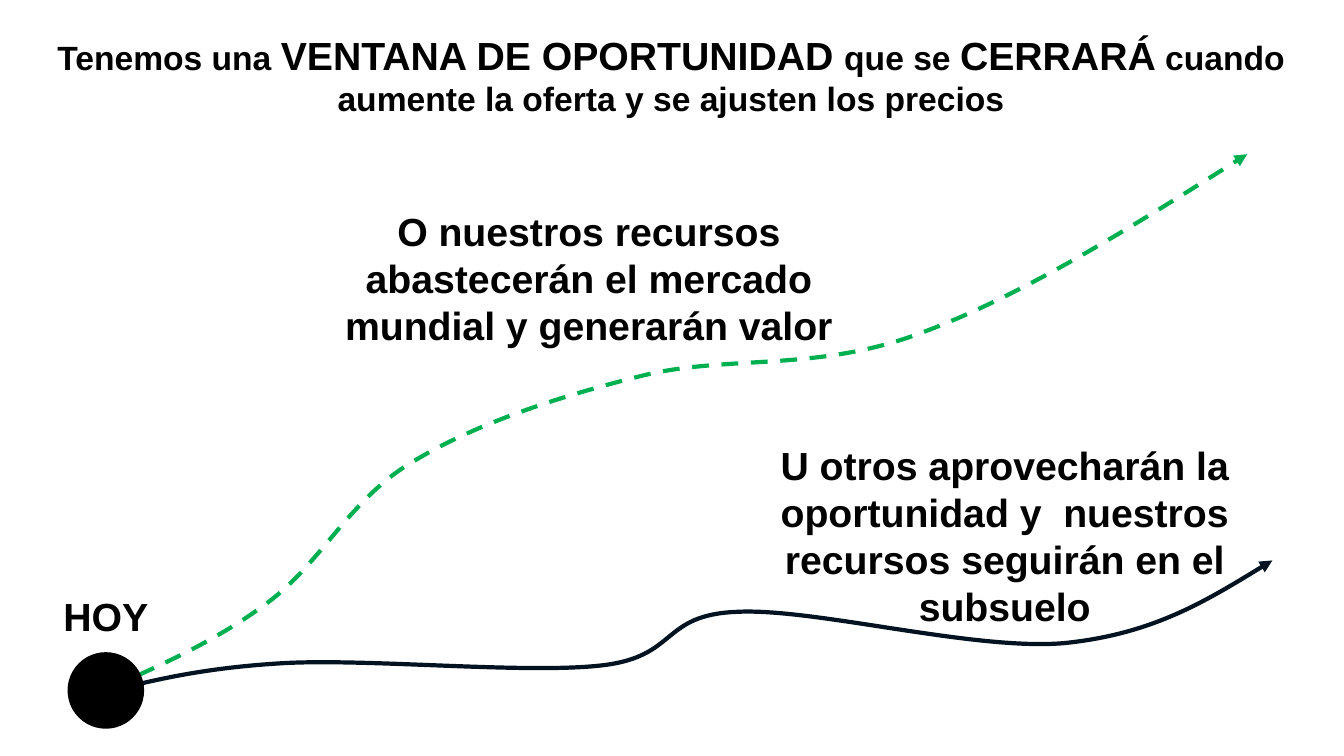
from dataclasses import dataclass

from lxml import etree
from pptx import Presentation
from pptx.dml.color import RGBColor
from pptx.enum import dml, shapes, text
from pptx.oxml import ns
from pptx.util import Inches, Pt


@dataclass(frozen=True)
class Theme:
    """Colours, font and sizes of the slide."""
    font: str = "Arial"
    ink: RGBColor = RGBColor(0x00, 0x00, 0x00)
    growth: RGBColor = RGBColor(0x00, 0xB0, 0x50)
    stagnation: RGBColor = RGBColor(0x01, 0x12, 0x21)
    small: Pt = Pt(24)
    large: Pt = Pt(28)
    line: Pt = Pt(3)


THEME = Theme()

TITLE_RUNS = [
    ("Tenemos una ", THEME.small),
    ("VENTANA DE OPORTUNIDAD ", THEME.large),
    ("que se ", THEME.small),
    ("CERRARÁ", THEME.large),
    (" cuando aumente la oferta y se ajusten los precios", THEME.small),
]

LABELS = [
    ("O nuestros recursos abastecerán el mercado mundial y generarán valor",
     (3.11, 2, 5.46, 1.51)),
    ("U otros aprovecharán la oportunidad y  nuestros recursos seguirán en el subsuelo",
     (7.26, 4.33, 5.41, 1.96)),
    ("HOY", (0.34, 5.8, 1.42, 0.62)),
]

GROWTH_CURVE = [
    (0.84, 6.93),
    (1.47, 6.66), (2.1, 6.39), (2.64, 5.99),
    (3.18, 5.6), (3.46, 4.96), (4.08, 4.59),
    (4.7, 4.21), (5.52, 3.94), (6.36, 3.73),
    (7.19, 3.52), (8.08, 3.69), (9.09, 3.32),
    (10.09, 2.96), (11.23, 2.25), (12.37, 1.53),
]

STAGNATION_CURVE = [
    (0.89, 6.91),
    (1.42, 6.77), (1.95, 6.63), (2.8, 6.58),
    (3.65, 6.53), (5.23, 6.69), (5.98, 6.6),
    (6.73, 6.51), (6.55, 6.1), (7.31, 6.07),
    (8.07, 6.03), (9.67, 6.46), (10.56, 6.38),
    (11.44, 6.29), (12.03, 5.92), (12.62, 5.56),
]


def write_runs(frame, runs):
    """Write centred bold runs, each with its own size."""
    frame.word_wrap = True
    frame.auto_size = text.MSO_AUTO_SIZE.NONE
    frame.vertical_anchor = text.MSO_ANCHOR.MIDDLE
    paragraph = frame.paragraphs[0]
    paragraph.alignment = text.PP_ALIGN.CENTER
    for wording, size in runs:
        run = paragraph.add_run()
        run.text = wording
        run.font.name = THEME.font
        run.font.size = size
        run.font.bold = True
        run.font.color.rgb = THEME.ink


def set_title(slide, runs, box):
    """Place and fill the title placeholder."""
    title = slide.shapes.title
    title.left, title.top, title.width, title.height = map(Inches, box)
    write_runs(title.text_frame, runs)


def add_label(slide, wording, box):
    """Add a centred text box."""
    label = slide.shapes.add_textbox(*map(Inches, box))
    write_runs(label.text_frame, [(wording, THEME.large)])


def bend_segments(shape):
    """Turn each three straight segments into one cubic curve."""
    segments = list(shape.element.iter(ns.qn("a:lnTo")))
    for first in range(0, len(segments), 3):
        curve = etree.Element(ns.qn("a:cubicBezTo"))
        segments[first].addprevious(curve)
        for segment in segments[first:first + 3]:
            curve.append(segment[0])
            segment.getparent().remove(segment)


def add_curved_arrow(slide, points, color, dash=None):
    """Draw a smooth arrow from a start point and cubic control points."""
    start, *rest = [(Inches(x), Inches(y)) for x, y in points]
    builder = slide.shapes.build_freeform(*start)
    builder.add_line_segments(rest, close=False)
    arrow = builder.convert_to_shape()
    bend_segments(arrow)
    arrow.shadow.inherit = False
    arrow.fill.background()
    arrow.line.color.rgb = color
    arrow.line.width = THEME.line
    if dash is not None:
        arrow.line.dash_style = dash
    outline = arrow.element.spPr.find(ns.qn("a:ln"))
    etree.SubElement(outline, ns.qn("a:tailEnd"), type="triangle")


def add_dot(slide, box):
    """Add the solid circle that marks today."""
    dot = slide.shapes.add_shape(shapes.MSO_SHAPE.OVAL, *map(Inches, box))
    dot.shadow.inherit = False
    dot.fill.solid()
    dot.fill.fore_color.rgb = THEME.ink
    dot.line.fill.background()


def main():
    """Build and save the slide."""
    presentation = Presentation()
    presentation.slide_width = Inches(13.33)
    presentation.slide_height = Inches(7.5)
    slide = presentation.slides.add_slide(presentation.slide_layouts[5])
    set_title(slide, TITLE_RUNS, (0.21, 0.28, 12.89, 0.92))
    add_curved_arrow(slide, GROWTH_CURVE, THEME.growth, dml.MSO_LINE.DASH)
    add_curved_arrow(slide, STAGNATION_CURVE, THEME.stagnation)
    add_dot(slide, (0.67, 6.47, 0.76, 0.76))
    for wording, box in LABELS:
        add_label(slide, wording, box)
    presentation.save("out.pptx")


if __name__ == "__main__":
    main()
